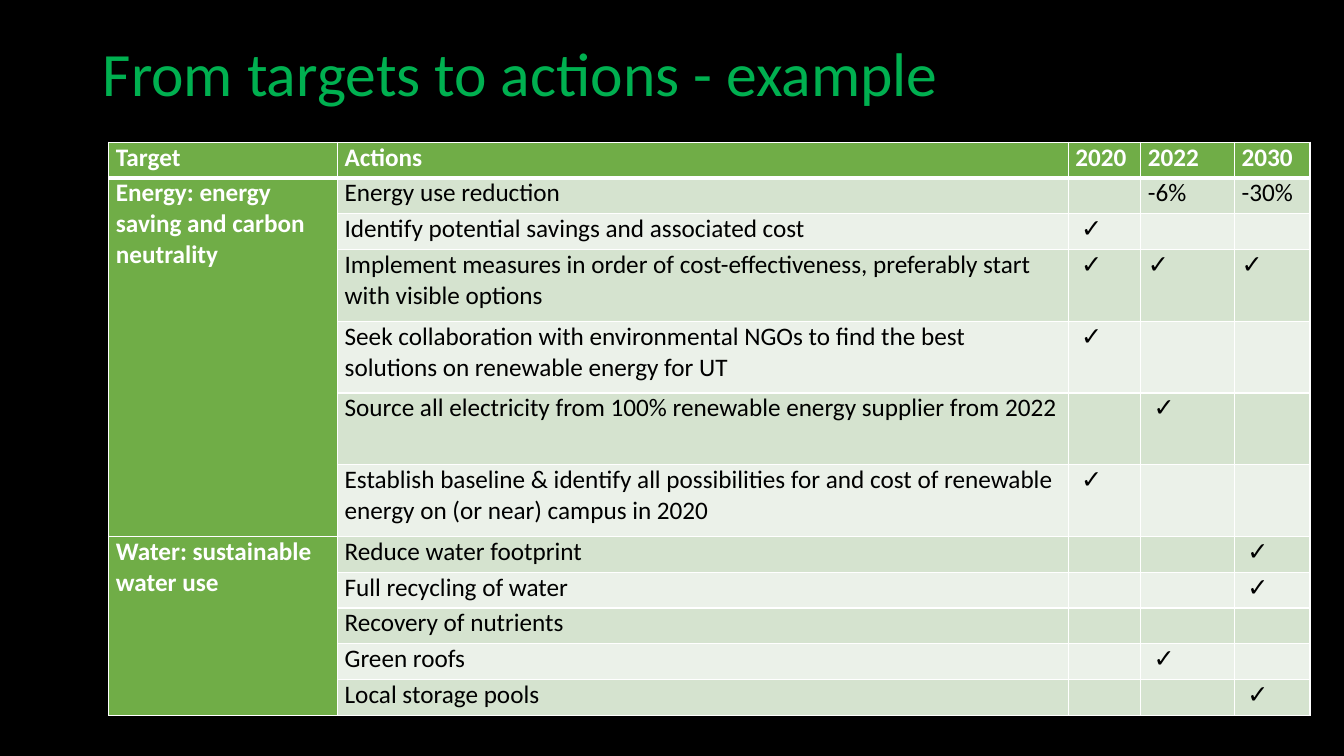
from pptx import Presentation
from pptx.dml.color import RGBColor
from pptx.enum.text import MSO_ANCHOR, MSO_AUTO_SIZE, PP_ALIGN
from pptx.oxml import parse_xml
from pptx.oxml.ns import nsdecls
from pptx.util import Pt

MIDDLE = MSO_ANCHOR.MIDDLE
NO_FIT = MSO_AUTO_SIZE.NONE
LEFT = PP_ALIGN.LEFT

BLACK = RGBColor(0x00, 0x00, 0x00)
WHITE = RGBColor(0xFF, 0xFF, 0xFF)
TITLE_GREEN = RGBColor(0x00, 0xB0, 0x50)
HEAD_GREEN = RGBColor(0x70, 0xAD, 0x47)
BANDS = [RGBColor(0xEB, 0xF1, 0xE9), RGBColor(0xD5, 0xE3, 0xCF)]
FONT = "Calibri"

COL_WIDTHS = [163.4, 522, 51.8, 67, 54]
LINE_HEIGHT = 25.6
TALL_ROWS = range(3, 7)
TARGET_SPANS = [(1, 6), (7, 11)]
ROWS = [
    ["Target", "Actions", "2020", "2022", "2030"],
    ["Energy: energy saving and carbon neutrality", "Energy use reduction", "", "-6%", "-30%"],
    ["", "Identify potential savings and associated cost", " ✓", "", ""],
    ["", "Implement measures in order of cost-effectiveness, preferably start with visible options",
     " ✓", "✓ ", "✓ "],
    ["", "Seek collaboration with environmental NGOs to find the best solutions on renewable energy for UT",
     " ✓", "", ""],
    ["", "Source all electricity from 100% renewable energy supplier from 2022", "", " ✓", ""],
    ["", "Establish baseline & identify all possibilities for and cost of renewable energy on (or near) "
     "campus in 2020", " ✓", "", ""],
    ["Water: sustainable water use", "Reduce water footprint", "", "", " ✓"],
    ["", "Full recycling of water", "", "", " ✓"],
    ["", "Recovery of nutrients ", "", "", ""],
    ["", "Green roofs", "", " ✓", ""],
    ["", "Local storage pools", "", "", " ✓"],
]


def style_text(p, size, color, bold):
    p.alignment = LEFT
    for font in [p.font] + [r.font for r in p.runs]:
        font.name = FONT
        font.size = Pt(size)
        font.bold = bold
        font.color.rgb = color


def add_border(cell, side, width):
    cell._tc.get_or_add_tcPr().append(parse_xml(
        f'<a:ln{side} {nsdecls("a")} w="{Pt(width)}"><a:solidFill>'
        f'<a:srgbClr val="{WHITE}"/></a:solidFill></a:ln{side}>'))


prs = Presentation()
prs.slide_width = Pt(960)
prs.slide_height = Pt(540)
s = prs.slides.add_slide(prs.slide_layouts[5])
s.background.fill.solid()
s.background.fill.fore_color.rgb = BLACK

title = s.shapes.title
title.left, title.top, title.width, title.height = Pt(66.2), Pt(28.8), Pt(828), Pt(51.1)
tf = title.text_frame
tf.text = "From targets to actions - example"
tf.word_wrap = True
tf.auto_size = NO_FIT
tf.vertical_anchor = MIDDLE
tf.paragraphs[0].line_spacing = 0.9
style_text(tf.paragraphs[0], 44, TITLE_GREEN, False)

table = s.shapes.add_table(len(ROWS), len(COL_WIDTHS), Pt(77.6), Pt(101.5),
                           Pt(sum(COL_WIDTHS)), Pt(16 * LINE_HEIGHT)).table
for col, width in zip(table.columns, COL_WIDTHS):
    col.width = Pt(width)

for i, row in enumerate(ROWS):
    table.rows[i].height = Pt(LINE_HEIGHT * (2 if i in TALL_ROWS else 1))
    for j, text in enumerate(row):
        cell = table.cell(i, j)
        heading = i == 0 or j == 0
        cell.text = text
        cell.margin_left = cell.margin_right = Pt(5.2)
        cell.margin_top = cell.margin_bottom = Pt(0)
        style_text(cell.text_frame.paragraphs[0], 18, WHITE if heading else BLACK, heading)
        add_border(cell, "L", 1)
        add_border(cell, "R", 1)
        add_border(cell, "T", 3 if i == 1 else 1)
        add_border(cell, "B", 3 if i == 0 else 1)
        cell.fill.solid()
        cell.fill.fore_color.rgb = HEAD_GREEN if heading else BANDS[i % 2]

for first, last in TARGET_SPANS:
    table.cell(first, 0).merge(table.cell(last, 0))

prs.save("out.pptx")
